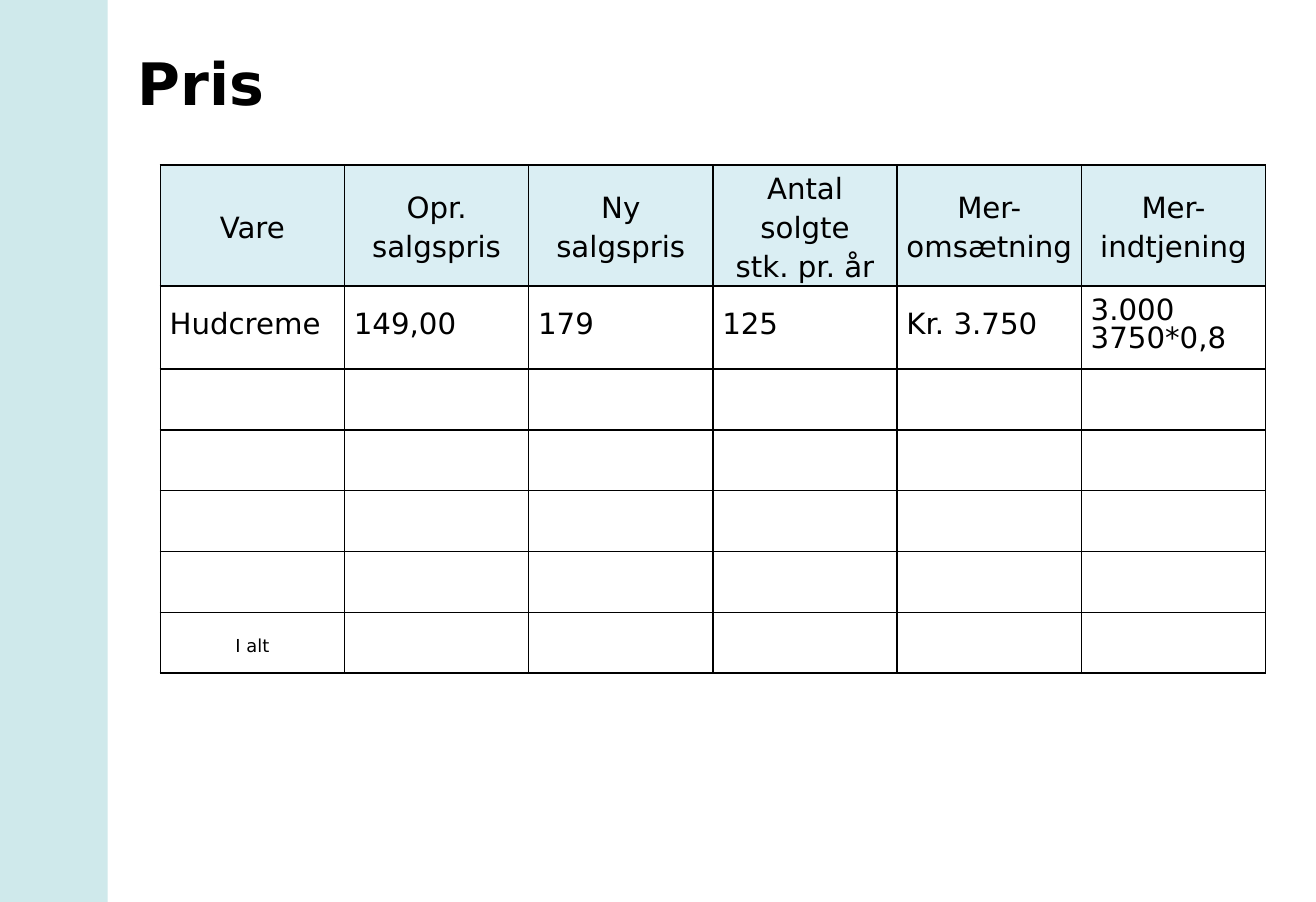
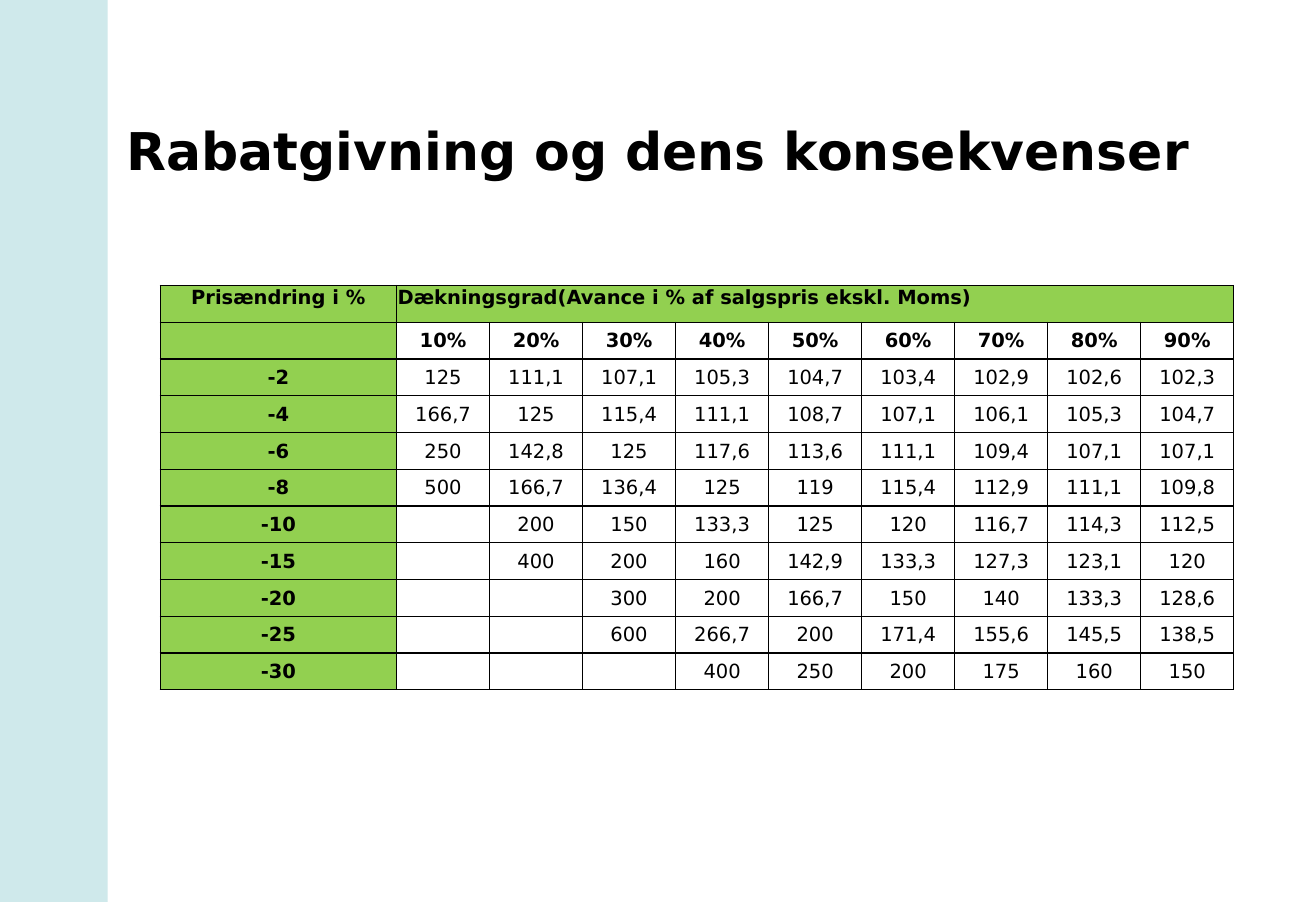
from dataclasses import dataclass, replace
from typing import Optional, Union

from lxml.etree import SubElement
from pptx import Presentation
from pptx.dml.color import RGBColor
from pptx.enum.shapes import MSO_SHAPE
from pptx.enum.text import MSO_ANCHOR, PP_ALIGN
from pptx.oxml.ns import qn
from pptx.util import Inches, Pt

# Shared look
WIDTH, HEIGHT = 11.25, 7.71
FONT = "DejaVu Sans"
BLACK, BAND, PALE_BLUE, GREEN = "000000", "BBE0E3", "DAEEF3", "92D050"
BAND_WIDTH, BAND_ALPHA = 0.92, 70
TABLE_LEFT = 1.37


@dataclass(frozen=True)
class Style:
    size: float
    bold: bool = False
    align: PP_ALIGN = PP_ALIGN.LEFT
    spacing: Union[float, Pt, None] = None
    anchor: MSO_ANCHOR = MSO_ANCHOR.MIDDLE
    fill: Optional[str] = None


@dataclass(frozen=True)
class Cell:
    text: str
    style: Style


@dataclass(frozen=True)
class Grid:
    top: float
    cols: list[float]
    rows: list[float]
    margins: tuple[float, float, float, float]  # left, top, right, bottom
    cells: list[list[Cell]]


def color(value: str) -> RGBColor:
    return RGBColor.from_string(value)


def write(tf, text: str, style: Style) -> None:
    """Write each line of text as a paragraph."""
    for i, line in enumerate(text.splitlines()):
        p = tf.paragraphs[0] if i == 0 else tf.add_paragraph()
        p.alignment = style.align
        if style.spacing is not None:
            p.line_spacing = style.spacing
        r = p.add_run()
        r.text = line
        r.font.name = FONT
        r.font.size = Pt(style.size)
        r.font.bold = style.bold
        r.font.color.rgb = color(BLACK)


def add_band(s) -> None:
    sp = s.shapes.add_shape(MSO_SHAPE.RECTANGLE, 0, 0, Inches(BAND_WIDTH), Inches(HEIGHT))
    sp.shadow.inherit = False
    sp.line.fill.background()
    sp.fill.solid()
    sp.fill.fore_color.rgb = color(BAND)
    rgb = sp.fill._xPr.find(".//" + qn("a:srgbClr"))
    SubElement(rgb, qn("a:alpha"), val=str(BAND_ALPHA * 1000))


def add_title(s, text: str, left: float, top: float, size: float) -> None:
    box = s.shapes.add_textbox(Inches(left), Inches(top), Inches(10), Inches(0.87))
    box.text_frame.word_wrap = True
    write(box.text_frame, text, Style(size, bold=True))


def add_borders(cell) -> None:
    tc_pr = cell._tc.get_or_add_tcPr()
    for side in ("lnL", "lnR", "lnT", "lnB"):
        ln = SubElement(tc_pr, qn(f"a:{side}"), w=str(Pt(1)))
        SubElement(SubElement(ln, qn("a:solidFill")), qn("a:srgbClr"), val=BLACK)


def add_grid(s, grid: Grid):
    frame = s.shapes.add_table(
        len(grid.rows), len(grid.cols), Inches(TABLE_LEFT), Inches(grid.top),
        Inches(sum(grid.cols)), Inches(sum(grid.rows)))
    table = frame.table
    table.first_row = table.horz_banding = False
    for col, width in zip(table.columns, grid.cols):
        col.width = Inches(width)
    for row, height in zip(table.rows, grid.rows):
        row.height = Inches(height)
    for y, line in enumerate(grid.cells):
        for x, item in enumerate(line):
            cell = table.cell(y, x)
            add_borders(cell)
            if item.style.fill:
                cell.fill.solid()
                cell.fill.fore_color.rgb = color(item.style.fill)
            else:
                cell.fill.background()
            (cell.margin_left, cell.margin_top,
             cell.margin_right, cell.margin_bottom) = map(Inches, grid.margins)
            cell.vertical_anchor = item.style.anchor
            write(cell.text_frame, item.text, item.style)
    return table


def new_slide(prs):
    s = prs.slides.add_slide(prs.slide_layouts[6])
    add_band(s)
    return s


# Price slide
PRICE_HEADS = ["Vare", "Opr. salgspris", "Ny salgspris", "Antal solgte\nstk. pr. år",
               "Mer-\nomsætning", "Mer-\nindtjening"]
PRICE_ITEM = ["Hudcreme", "149,00", "179", "125", "Kr. 3.750", "3.000\n3750*0,8"]
EMPTY_ROWS = 4


def price_slide(prs) -> None:
    s = new_slide(prs)
    add_title(s, "Pris", 1.08, 0.35, 36)
    head = Style(18, align=PP_ALIGN.CENTER, spacing=1.15, fill=PALE_BLUE)
    body = Style(18, spacing=Pt(17))
    total = replace(body, size=11, align=PP_ALIGN.CENTER)
    n = len(PRICE_HEADS)
    cells = [[Cell(t, head) for t in PRICE_HEADS],
             [Cell(t, body) for t in PRICE_ITEM],
             *[[Cell("", body)] * n for _ in range(EMPTY_ROWS)],
             [Cell("I alt", total)] + [Cell("", body)] * (n - 1)]
    rows = [1.0, 0.71] + [0.52] * (EMPTY_ROWS + 1)
    add_grid(s, Grid(1.41, [9.45 / n] * n, rows, (0.08, 0, 0.08, 0), cells))


# Discount slide: index of sales needed, by price change and margin
MARGINS = [f"{m}%" for m in range(10, 100, 10)]
DISCOUNTS = {
    "-2": ["125", "111,1", "107,1", "105,3", "104,7", "103,4", "102,9", "102,6", "102,3"],
    "-4": ["166,7", "125", "115,4", "111,1", "108,7", "107,1", "106,1", "105,3", "104,7"],
    "-6": ["250", "142,8", "125", "117,6", "113,6", "111,1", "109,4", "107,1", "107,1"],
    "-8": ["500", "166,7", "136,4", "125", "119", "115,4", "112,9", "111,1", "109,8"],
    "-10": ["", "200", "150", "133,3", "125", "120", "116,7", "114,3", "112,5"],
    "-15": ["", "400", "200", "160", "142,9", "133,3", "127,3", "123,1", "120"],
    "-20": ["", "", "300", "200", "166,7", "150", "140", "133,3", "128,6"],
    "-25": ["", "", "600", "266,7", "200", "171,4", "155,6", "145,5", "138,5"],
    "-30": ["", "", "", "400", "250", "200", "175", "160", "150"],
}


def discount_slide(prs) -> None:
    s = new_slide(prs)
    add_title(s, "Rabatgivning og dens konsekvenser", 0.98, 0.96, 32)
    body = Style(12, align=PP_ALIGN.CENTER)
    bold = replace(body, bold=True)
    side = replace(bold, fill=GREEN)
    head = replace(side, anchor=MSO_ANCHOR.TOP)
    wide = replace(head, align=PP_ALIGN.LEFT)
    n = len(MARGINS)
    cells = [[Cell("Prisændring i %", head),
              Cell("Dækningsgrad(Avance i % af salgspris ekskl. Moms)", wide)]
             + [Cell("", wide)] * (n - 1),
             [Cell("", side)] + [Cell(m, bold) for m in MARGINS]]
    for change, values in DISCOUNTS.items():
        cells.append([Cell(change, side)] + [Cell(v, body) for v in values])
    rows = [3.46 / len(cells)] * len(cells)
    cols = [2.02] + [7.16 / n] * n
    table = add_grid(s, Grid(2.44, cols, rows, (0.01, 0.01, 0.01, 0), cells))
    table.cell(0, 1).merge(table.cell(0, n))


def main() -> None:
    prs = Presentation()
    prs.slide_width, prs.slide_height = Inches(WIDTH), Inches(HEIGHT)
    price_slide(prs)
    discount_slide(prs)
    prs.save("out.pptx")


if __name__ == "__main__":
    main()
